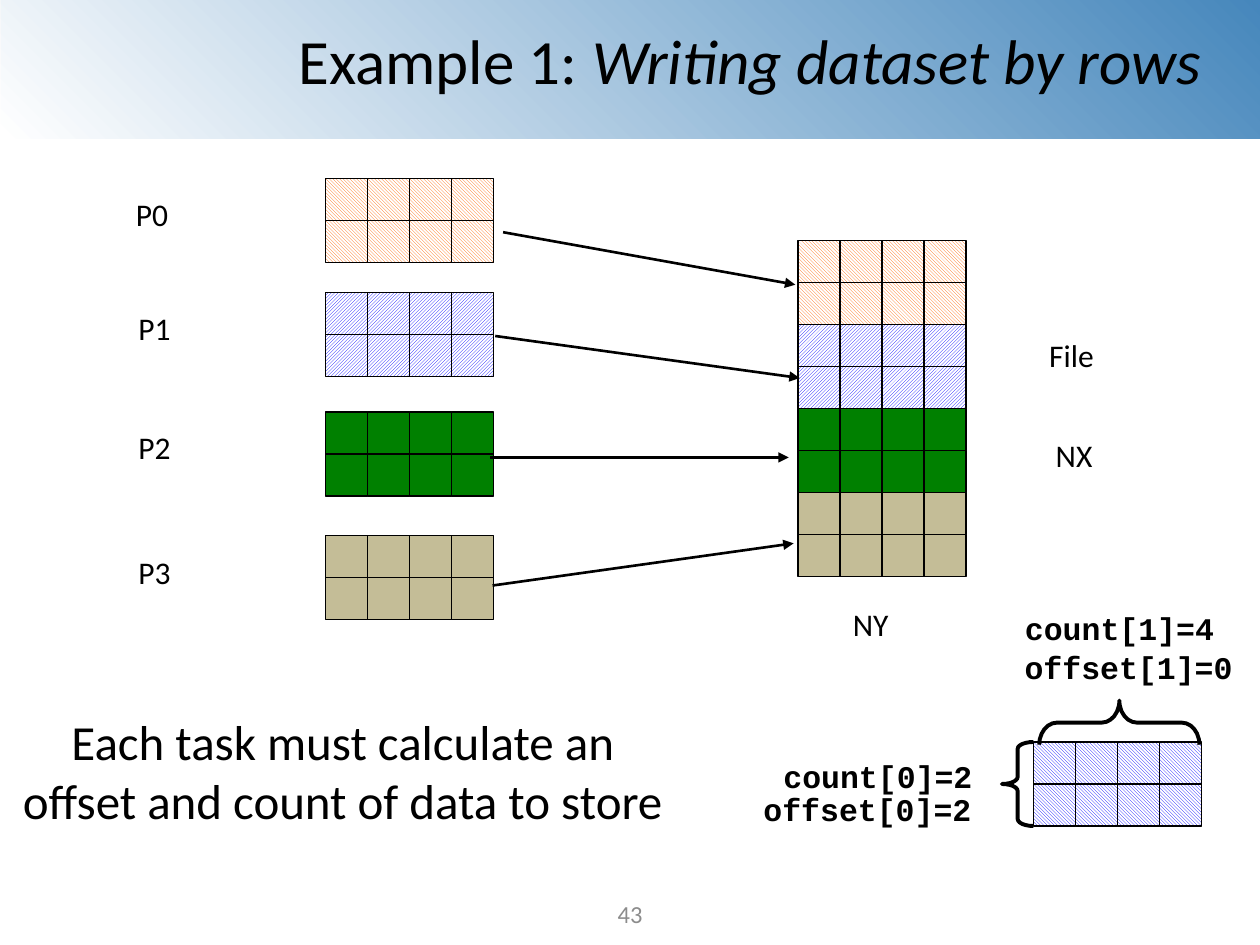
import pptx
import pptx.dml.color
import pptx.enum.dml
import pptx.enum.shapes
import pptx.enum.text
import pptx.oxml
import pptx.util
from pptx.util import Pt

SHAPES = pptx.enum.shapes.MSO_SHAPE
PATTERNS = pptx.enum.dml.MSO_PATTERN
ALIGN = pptx.enum.text.PP_ALIGN
ANCHOR = pptx.enum.text.MSO_ANCHOR
NAMESPACE = 'xmlns:a="http://schemas.openxmlformats.org/drawingml/2006/main"'

# Content: all lengths in points
TITLE = [("Example 1: ", False), ("Writing dataset by rows", True)]
MESSAGE = "Each task must calculate an offset and count of data to store"
PAGE_NUMBER = "43"
CELL = 24
COLUMNS = 4
TASK_ROWS = 2
TASK_LEFT = 186
FILE_LEFT, FILE_TOP = 456, 137.5
SAMPLE_LEFT, SAMPLE_TOP = 590.5, 424

# Task name, label left, label top, block top, colour, pattern, arrow from, arrow to
TASKS = [
    ("P0", 70.5, 108, 102, "FF6600", PATTERNS.DARK_DOWNWARD_DIAGONAL,
     (287.5, 132.7), (454.5, 162.7)),
    ("P1", 72, 173, 167, "0000FF", PATTERNS.DARK_UPWARD_DIAGONAL,
     (283, 192), (457, 216)),
    ("P2", 72, 241.2, 235.5, "008000", None, (280, 261.4), (450.7, 261.4)),
    ("P3", 72, 312.2, 306, "C4BD97", None, (281.5, 334.6), (453.5, 310.5)),
]
# Text, left, top, width
LABELS = [("File", 592.5, 188.5, 52), ("NX", 596.2, 245.7, 50), ("NY", 480.3, 342.3, 50)]
CODE_LABELS = [
    ("count[0]=2", 440.6, 429, 124),
    ("count[1]=4", 578.6, 344.7, 124),
    ("offset[0]=2", 429.2, 447.7, 136),
    ("offset[1]=0", 578.4, 366.7, 136),
]
# Left, top, width, height, rotation, curve
BRACES = [(572.5, 424, 18, 48, 0, 0.22), (627, 367.2, 25.2, 91.5, 90, 0.4)]

presentation = pptx.Presentation()
presentation.slide_width, presentation.slide_height = Pt(720), Pt(540)
slide = presentation.slides.add_slide(presentation.slide_layouts[5])


def rgb(code):
    return pptx.dml.color.RGBColor.from_string(code)


def add_text(shape, text, size=18, font="Calibri", color="000000", bold=False,
             italic=False, align=ALIGN.LEFT, anchor=ANCHOR.TOP, wrap=False):
    frame = shape.text_frame
    frame.word_wrap = wrap
    frame.auto_size = pptx.enum.text.MSO_AUTO_SIZE.NONE
    frame.vertical_anchor = anchor
    paragraph = frame.paragraphs[0]
    paragraph.alignment = align
    run = paragraph.add_run()
    run.text = text
    run.font.name, run.font.size = font, Pt(size)
    run.font.bold, run.font.italic = bold, italic
    run.font.color.rgb = rgb(color)


def add_box(left, top, width, height):
    return slide.shapes.add_textbox(Pt(left), Pt(top), Pt(width), Pt(height))


def add_outlined(kind, left, top, width, height, weight):
    shape = slide.shapes.add_shape(kind, Pt(left), Pt(top), Pt(width), Pt(height))
    shape.shadow.inherit = False
    shape.line.color.rgb = rgb("000000")
    shape.line.width = Pt(weight)
    return shape


def add_block(left, top, color, pattern):
    for row in range(TASK_ROWS):
        for column in range(COLUMNS):
            cell = add_outlined(SHAPES.RECTANGLE, left + column * CELL,
                                top + row * CELL, CELL, CELL, 0.75)
            if pattern is None:
                cell.fill.solid()
                cell.fill.fore_color.rgb = rgb(color)
            else:
                cell.fill.patterned()
                cell.fill.pattern = pattern
                cell.fill.fore_color.rgb = rgb(color)
                cell.fill.back_color.rgb = rgb("FFFFFF")


def add_arrow(start, end):
    arrow = slide.shapes.add_connector(
        pptx.enum.shapes.MSO_CONNECTOR.STRAIGHT, *(Pt(value) for value in start + end))
    arrow.line.color.rgb = rgb("000000")
    arrow.line.width = Pt(1.5)
    arrow.line._get_or_add_ln().append(
        pptx.oxml.parse_xml(f'<a:tailEnd {NAMESPACE} type="triangle"/>'))
    arrow._element.spPr.append(pptx.oxml.parse_xml(f"<a:effectLst {NAMESPACE}/>"))


# Banner with a gradient spreading from its top right corner, behind the title
banner = slide.shapes.add_shape(SHAPES.RECTANGLE, Pt(0.5), Pt(0), Pt(719.5), Pt(79.2))
banner.shadow.inherit = False
banner.line.fill.background()
banner._element.spPr.insert(2, pptx.oxml.parse_xml(
    f'<a:gradFill {NAMESPACE} rotWithShape="1"><a:gsLst>'
    '<a:gs pos="0"><a:srgbClr val="4687BC"/></a:gs>'
    '<a:gs pos="100000"><a:srgbClr val="FFFFFF"/></a:gs></a:gsLst>'
    '<a:path path="circle"><a:fillToRect l="100000" b="100000"/></a:path></a:gradFill>'))
slide.shapes._spTree.insert(2, banner._element)

# Title
title = slide.shapes.title
title.left, title.top, title.width, title.height = Pt(139.5), Pt(8.6), Pt(578), Pt(50.4)
for text, italic in TITLE:
    add_text(title, text, size=36, italic=italic, align=ALIGN.CENTER)

# Tasks, their rows in the file, and the arrows between them
for index, (name, label_left, label_top, top, color, pattern, start, end) in enumerate(TASKS):
    add_text(add_box(label_left, label_top, 39.6, 36), name)
    add_block(TASK_LEFT, top, color, pattern)
    add_block(FILE_LEFT, FILE_TOP + index * TASK_ROWS * CELL, color, pattern)
    add_arrow(start, end)

for text, left, top, width in LABELS:
    add_text(add_box(left, top, width, 36), text)

# Message
add_text(add_box(0, 403.2, 391.7, 75), MESSAGE, size=28, align=ALIGN.CENTER, wrap=True)

# Sample block with its braces and code labels
add_block(SAMPLE_LEFT, SAMPLE_TOP, "0000FF", PATTERNS.DARK_DOWNWARD_DIAGONAL)
for left, top, width, height, rotation, curve in BRACES:
    brace = add_outlined(SHAPES.LEFT_BRACE, left, top, width, height, 2.25)
    brace.fill.background()
    brace.rotation = rotation
    brace.adjustments[0] = curve
for text, left, top, width in CODE_LABELS:
    add_text(add_box(left, top, width, 28.8), text, font="Courier New", bold=True)

# Page number
add_text(add_box(276, 510, 168, 24), PAGE_NUMBER, size=14, color="8C8C8C",
         align=ALIGN.CENTER, anchor=ANCHOR.MIDDLE)

presentation.save("out.pptx")
